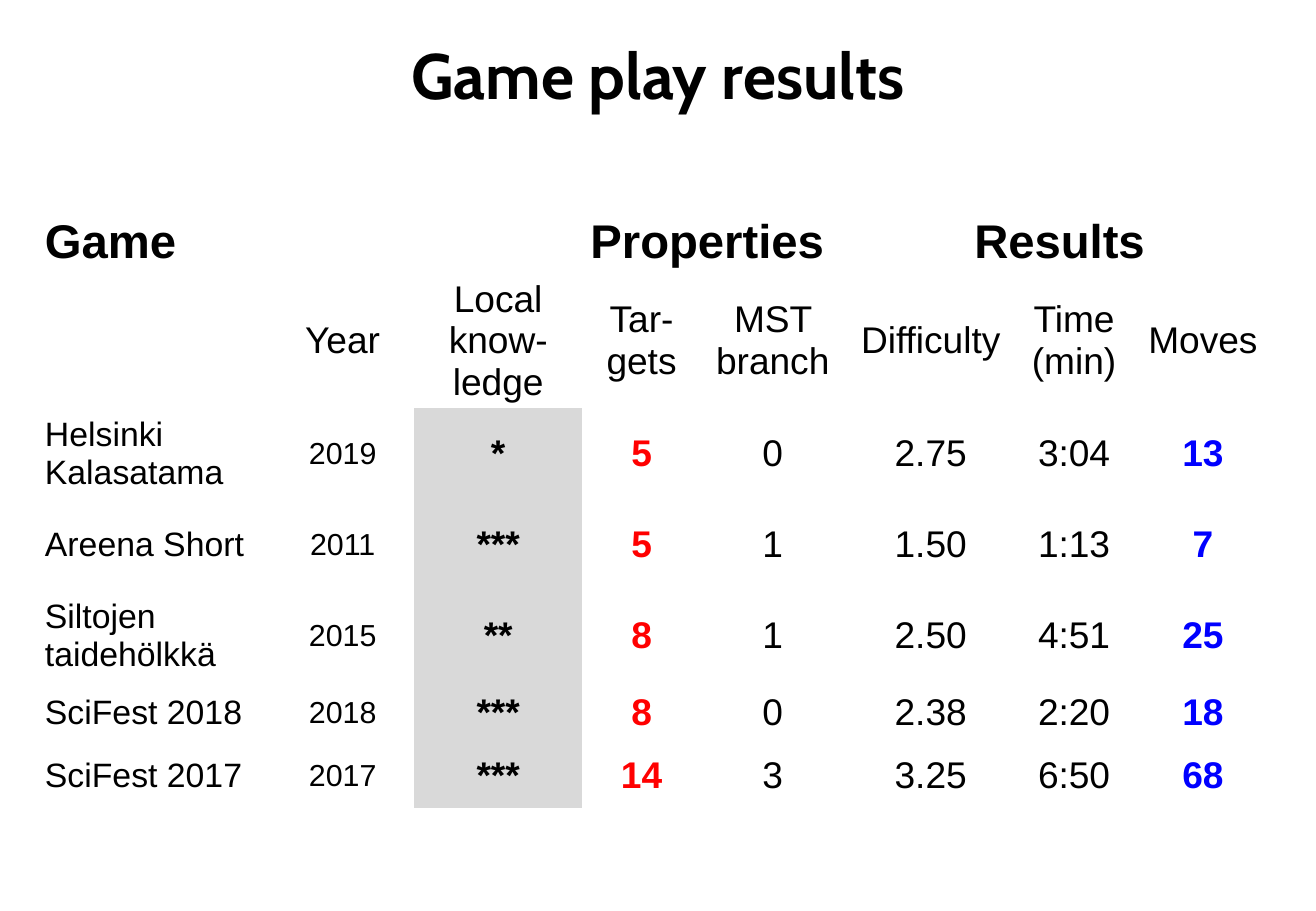
from pptx import Presentation
from pptx.dml.color import RGBColor
from pptx.enum.text import MSO_ANCHOR as Anchor, PP_ALIGN as Align
from pptx.oxml.ns import qn
from pptx.util import Pt

PX = 9144
COLORS = {"text": "000000", "targets": "FF0000", "moves": "0000FF",
          "shade": "D9D9D9", "page": "FFFFFF"}
NO_STYLE = "{2D5ABB26-0587-4C30-8999-92F81FD0307C}"

TITLE_BOX = (18, 21, 1047, 79)
TABLE_BOX = (30, 174, 1021, 434)
COLUMN_WIDTHS = (193, 118, 138, 98, 118, 142, 94, 118)
ROW_HEIGHTS = (30, 75, 75, 75, 75, 52, 52)

GROUPS = [("Game", 0, 2, Align.LEFT), ("Properties", 3, 4, Align.LEFT),
          ("Results", 5, 7, Align.CENTER)]
HEADINGS = ["", "Year", "Local know-ledge", "Tar-gets", "MST branch",
            "Difficulty", "Time (min)", "Moves"]
GAMES = [
    ["Helsinki Kalasatama", "2019", "*", "5", "0", "2.75", "3:04", "13"],
    ["Areena Short", "2011", "***", "5", "1", "1.50", "1:13", "7"],
    ["Siltojen taidehölkkä", "2015", "**", "8", "1", "2.50", "4:51", "25"],
    ["SciFest 2018", "2018", "***", "8", "0", "2.38", "2:20", "18"],
    ["SciFest 2017", "2017", "***", "14", "3", "3.25", "6:50", "68"],
]
SIZES = (20, 18, 22, 22, 22, 22, 22, 22)
KNOWLEDGE = 2
BOLD_COLORS = {KNOWLEDGE: "text", 3: "targets", 7: "moves"}


def write(frame, text, size, bold=False, color="text", align=Align.CENTER, font="Arial"):
    """Put one formatted run into the first paragraph of a text frame."""
    para = frame.paragraphs[0]
    para.alignment = align
    span = para.add_run()
    span.text = text
    span.font.name = font
    span.font.size = Pt(size)
    span.font.bold = bold
    span.font.color.rgb = RGBColor.from_string(COLORS[color])


def add_title(page, box, text):
    """Place the title placeholder in the box and fill it."""
    title = page.shapes.title
    title.left, title.top, title.width, title.height = [n * PX for n in box]
    title.text_frame.vertical_anchor = Anchor.MIDDLE
    write(title.text_frame, text, 38, True, font="Cabin")


def add_plain_table(page, box):
    """Add an unstyled table with this page's column widths and row heights."""
    shape = page.shapes.add_table(len(ROW_HEIGHTS), len(COLUMN_WIDTHS),
                                  *[n * PX for n in box])
    for style in shape.element.iter(qn("a:tableStyleId")):
        style.text = NO_STYLE
    table = shape.table
    table.first_row = table.horz_banding = False
    for column, width in zip(table.columns, COLUMN_WIDTHS):
        column.width = width * PX
    for row, height in zip(table.rows, ROW_HEIGHTS):
        row.height = height * PX
    for cell in table.iter_cells():
        cell.fill.background()
        cell.vertical_anchor = Anchor.MIDDLE
        cell.margin_left = cell.margin_right = 7 * PX
        cell.margin_top = cell.margin_bottom = 4 * PX
    return table


def add_results(page, box):
    """Fill the results table: group row, heading row and one row per game."""
    table = add_plain_table(page, box)
    for text, first, last, align in GROUPS:
        table.cell(0, first).merge(table.cell(0, last))
        write(table.cell(0, first).text_frame, text, 28, True, align=align)
    for col, text in enumerate(HEADINGS):
        if text:
            write(table.cell(1, col).text_frame, text, 22)
    for row, game in enumerate(GAMES, 2):
        for col, text in enumerate(game):
            write(table.cell(row, col).text_frame, text, SIZES[col],
                  col in BOLD_COLORS, BOLD_COLORS.get(col, "text"),
                  Align.CENTER if col else Align.LEFT)
        shade = table.cell(row, KNOWLEDGE).fill
        shade.solid()
        shade.fore_color.rgb = RGBColor.from_string(COLORS["shade"])


def main():
    """Build the deck and save it."""
    deck = Presentation()
    deck.slide_width, deck.slide_height = 1083 * PX, 750 * PX
    page = deck.slides.add_slide(deck.slide_layouts[5])
    page.background.fill.solid()
    page.background.fill.fore_color.rgb = RGBColor.from_string(COLORS["page"])
    add_title(page, TITLE_BOX, "Game play results")
    add_results(page, TABLE_BOX)
    deck.save("out.pptx")


if __name__ == "__main__":
    main()
